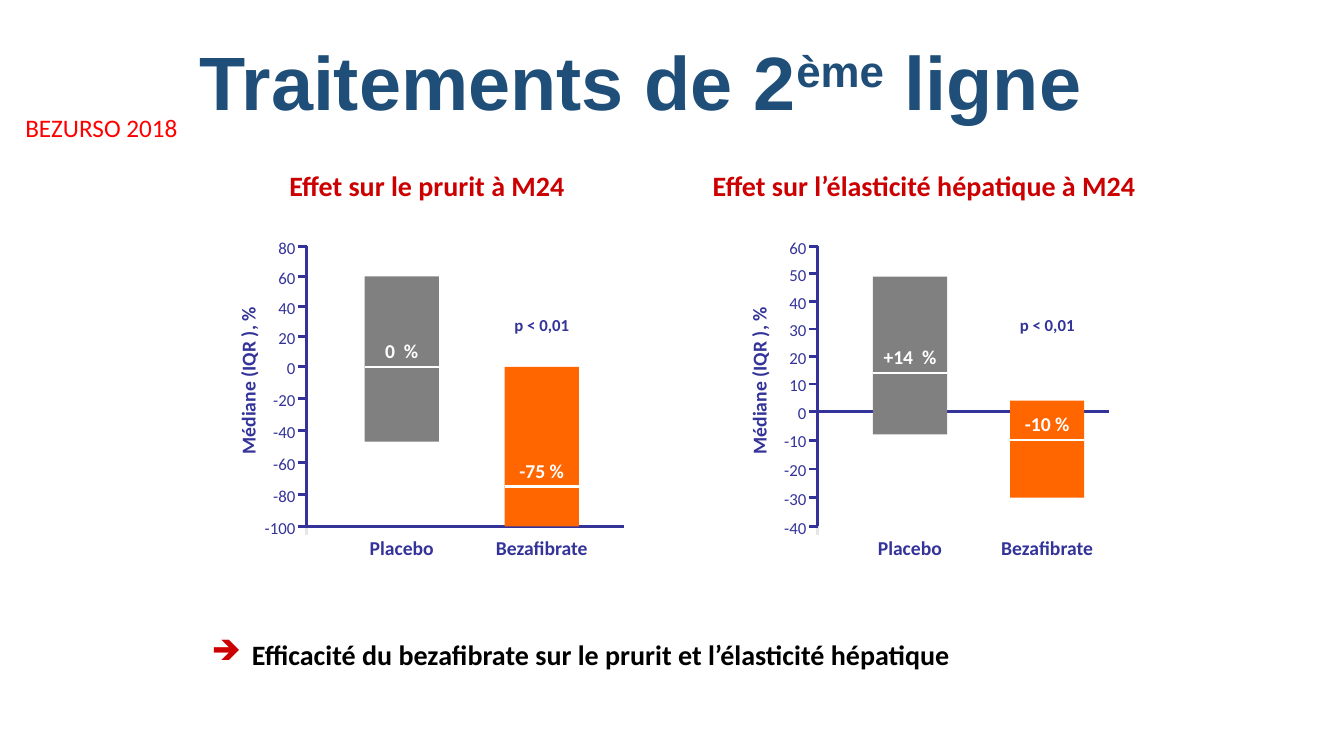
from dataclasses import dataclass

from lxml.etree import SubElement
from pptx import Presentation
from pptx.dml.color import RGBColor
from pptx.enum.shapes import MSO_CONNECTOR as Connector, MSO_SHAPE as Shape
from pptx.enum.text import MSO_ANCHOR as Anchor, MSO_AUTO_SIZE as AutoSize, PP_ALIGN as Align
from pptx.oxml.ns import qn
from pptx.util import Pt


@dataclass(frozen=True)
class Theme:
    """Colours, fonts and type sizes of the slide."""
    navy: str = "1F4E79"
    axis: str = "333399"
    accent: str = "CC0000"
    study: str = "FF0000"
    placebo: str = "808080"
    bezafibrate: str = "FF6600"
    white: str = "FFFFFF"
    black: str = "000000"
    faint: str = "E7E6E6"
    heading_font: str = "Arial"
    body_font: str = "Calibri"
    title: int = 54
    heading: int = 20
    source: int = 18
    label: int = 14
    tick: int = 12


@dataclass(frozen=True)
class Treatment:
    """Interquartile range and median of one treatment arm."""
    name: str
    color: str
    centre: float
    low: float
    high: float
    median: float
    median_text: str


@dataclass(frozen=True)
class Effect:
    """One panel: its heading, value scale and treatment arms."""
    heading: str
    heading_centre: float
    zero: float
    maximum: int
    minimum: int
    step: int
    baseline: int
    treatments: tuple


THEME = Theme()
PRURITUS = Effect(
    "Effet sur le prurit à M24", 86, 86, 80, -100, 20, -100,
    (Treatment("Placebo", THEME.placebo, 68, -47, 60, 0, "0  %"),
     Treatment("Bezafibrate", THEME.bezafibrate, 168, -100, 0, -75, "-75 %")))
ELASTICITY = Effect(
    "Effet sur l’élasticité hépatique à M24", 76, 118, 60, -40, 10, 0,
    (Treatment("Placebo", THEME.placebo, 66, -8, 49, 14, "+14  %"),
     Treatment("Bezafibrate", THEME.bezafibrate, 164, -30, 4, -10, "-10 %")))


def add_run(paragraph, words, size, color, bold=True, font=THEME.body_font):
    """Append one formatted run to a paragraph."""
    run = paragraph.add_run()
    run.text = words
    run.font.size = Pt(size)
    run.font.name = font
    run.font.bold = bold
    run.font.color.rgb = RGBColor.from_string(color)
    return run


def add_label(slide, box, words, size, color, bold=True, align=Align.CENTER, inset=True):
    """Place a single-line text box and return it."""
    label = slide.shapes.add_textbox(*map(Pt, box))
    frame = label.text_frame
    frame.word_wrap = False
    if not inset:
        frame.margin_left = frame.margin_right = frame.margin_top = frame.margin_bottom = 0
    frame.paragraphs[0].alignment = align
    add_run(frame.paragraphs[0], words, size, color, bold)
    return label


def add_rule(slide, x1, y1, x2, y2, color=THEME.axis, width=0):
    """Draw a straight line without shadow."""
    rule = slide.shapes.add_connector(Connector.STRAIGHT, *map(Pt, (x1, y1, x2, y2)))
    rule.line.color.rgb = RGBColor.from_string(color)
    rule.line.width = Pt(width)
    SubElement(rule._element.spPr, qn("a:effectLst"))


def add_title(slide, box):
    """Fill the title placeholder, with its superscript ordinal."""
    title = slide.shapes.title
    title.left, title.top, title.width, title.height = map(Pt, box)
    frame = title.text_frame
    frame.word_wrap = False
    frame.auto_size = AutoSize.NONE
    frame.vertical_anchor = Anchor.TOP
    paragraph = frame.paragraphs[0]
    paragraph.alignment = Align.LEFT
    for words, baseline in (("Traitements de 2", 0), ("ème", 30000), (" ligne", 0)):
        run = add_run(paragraph, words, THEME.title, THEME.navy, font=THEME.heading_font)
        if baseline:
            run.font._element.set("baseline", str(baseline))


def add_treatment(slide, treatment, axis, bottom, to_y):
    """Draw one arm: range bar, median line, median value and name."""
    bar_width = 53
    centre = axis + treatment.centre
    left = centre - bar_width / 2
    top, base, median = map(to_y, (treatment.high, treatment.low, treatment.median))
    bar = slide.shapes.add_shape(
        Shape.RECTANGLE, Pt(left), Pt(top), Pt(bar_width), Pt(base - top))
    bar.shadow.inherit = False
    bar.fill.solid()
    bar.fill.fore_color.rgb = RGBColor.from_string(treatment.color)
    bar.line.fill.background()
    add_rule(slide, left, median, left + bar_width, median, THEME.white, 1.5)
    add_label(slide, (centre - 20, median - 20, 40, 17), treatment.median_text,
              THEME.label, THEME.white, inset=False)
    add_label(slide, (centre - 33, bottom + 7, 66, 17), treatment.name,
              THEME.label, THEME.axis, inset=False)


def add_effect_panel(slide, box, effect):
    """Draw a panel whose box is the area between its axes."""
    axis, top, width, height = box
    bottom = top + height
    zero = top + effect.zero

    def to_y(value):
        """Convert a value to a height on the slide."""
        if value >= 0:
            return zero - value / effect.maximum * (zero - top)
        return zero + value / effect.minimum * (bottom - zero)

    add_label(slide, (axis + effect.heading_centre - 160, top - 59, 320, 32),
              effect.heading, THEME.heading, THEME.accent)
    axis_title = add_label(slide, (axis - 102, top + 84, 120, 24),
                           "Médiane (IQR ), %", THEME.label, THEME.axis)
    axis_title.rotation = 270

    add_rule(slide, axis, top, axis, bottom)
    add_rule(slide, axis, bottom, axis, bottom + 6, THEME.faint)
    for value in range(effect.minimum, effect.maximum + 1, effect.step):
        y = to_y(value)
        end = axis + width if value == effect.baseline else axis
        add_rule(slide, axis - 6, y, end, y)
        add_label(slide, (axis - 38, y - 6.5, 30, 14), str(value), THEME.tick,
                  THEME.axis, bold=False, align=Align.RIGHT, inset=False)

    for treatment in effect.treatments:
        add_treatment(slide, treatment, axis, bottom, to_y)
    tested = axis + effect.treatments[-1].centre
    add_label(slide, (tested - 20, top + 49, 40, 14), "p < 0,01",
              THEME.tick, THEME.axis, inset=False)


def add_conclusion(slide, box):
    """Write the closing statement with its arrow bullet."""
    conclusion = slide.shapes.add_textbox(*map(Pt, box))
    conclusion.text_frame.word_wrap = True
    paragraph = conclusion.text_frame.paragraphs[0]
    add_run(paragraph, "Efficacité du bezafibrate sur le prurit et l’élasticité hépatique",
            THEME.heading, THEME.black)
    properties = paragraph._p.get_or_add_pPr()
    indent = Pt(28.8)
    properties.set("marL", str(indent))
    properties.set("indent", str(-indent))
    bullet_color = SubElement(properties, qn("a:buClr"))
    SubElement(bullet_color, qn("a:srgbClr")).set("val", THEME.accent)
    SubElement(properties, qn("a:buChar")).set("char", "➔")


def main():
    """Build and save the slide."""
    deck = Presentation()
    deck.slide_width, deck.slide_height = Pt(960), Pt(540)
    slide = deck.slides.add_slide(deck.slide_layouts[5])
    add_title(slide, (135.4, 21, 675, 73))
    add_label(slide, (11, 76.5, 124, 29), "BEZURSO 2018", THEME.source,
              THEME.study, bold=False, align=Align.LEFT)
    add_effect_panel(slide, (219, 176, 227, 200), PRURITUS)
    add_effect_panel(slide, (584, 176, 208, 200), ELASTICITY)
    add_conclusion(slide, (144, 451.5, 696, 31))
    deck.save("out.pptx")


if __name__ == "__main__":
    main()
